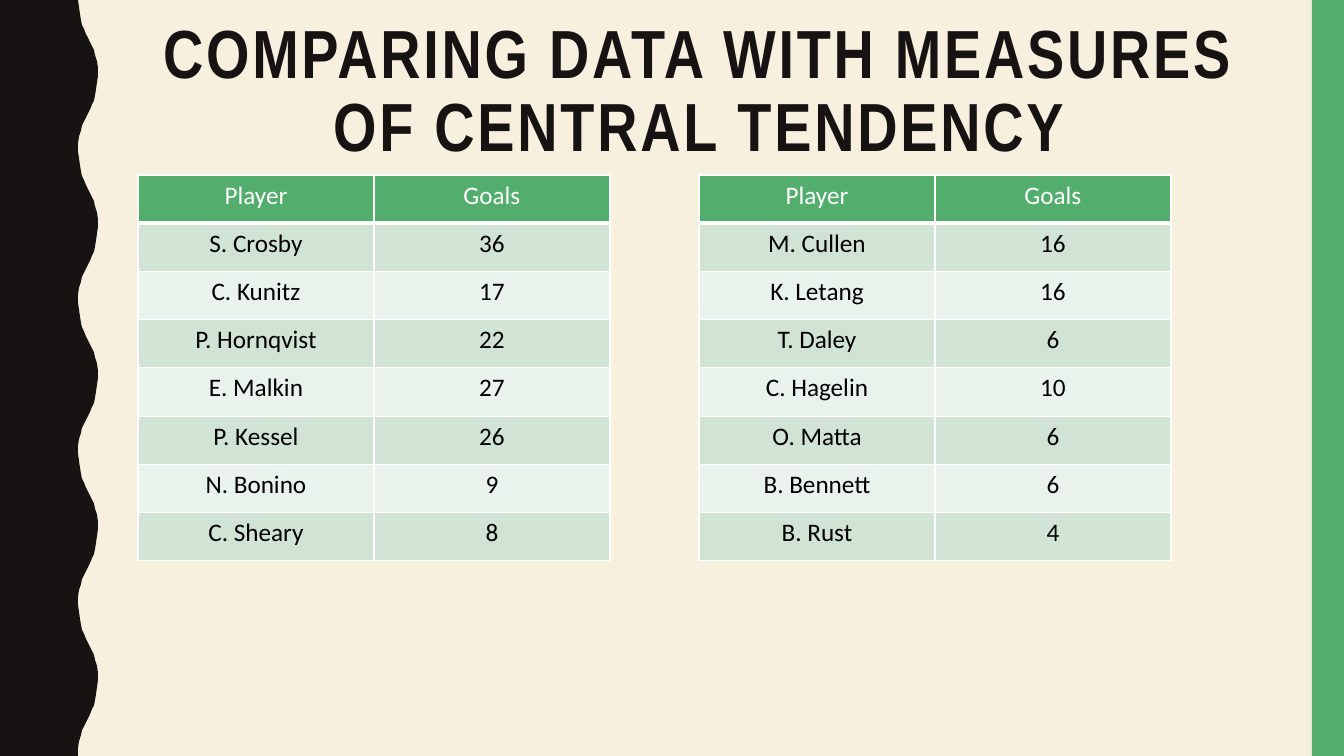
from lxml import etree
from pptx import Presentation
from pptx.dml.color import RGBColor
from pptx.enum.shapes import MSO_SHAPE
from pptx.enum.text import MSO_ANCHOR, PP_ALIGN
from pptx.oxml.ns import qn
from pptx.util import Emu, Pt

RECTANGLE = MSO_SHAPE.RECTANGLE
MIDDLE = MSO_ANCHOR.MIDDLE
CENTER = PP_ALIGN.CENTER

CREAM = RGBColor(0xF7, 0xF0, 0xDF)
INK = RGBColor(0x17, 0x13, 0x12)
GREEN = RGBColor(0x53, 0xAE, 0x6E)
PALE_GREEN = RGBColor(0xD1, 0xE3, 0xD5)
PALEST_GREEN = RGBColor(0xE9, 0xF2, 0xEB)
WHITE = RGBColor(0xFF, 0xFF, 0xFF)
BLACK = RGBColor(0x00, 0x00, 0x00)

WIDTH, HEIGHT = 1344, 756
EMU_PER_PX = 914400 / 100.8

# Half a wave of the left edge, from its inner to its outer side
HALF_WAVE = [(78, 0), (79, 7), (80, 14), (81, 20), (82, 25), (84, 29), (86, 34),
             (88, 38), (90, 42), (92, 46), (94, 50), (95, 55), (97, 61), (98, 68)]
HALF_WAVE_COUNT = 10
INNER, OUTER = 78, 98

TITLE = "COMPARING DATA WITH MEASURES OF CENTRAL TENDENCY"
TITLE_FORMAT = {"name": "Arial Narrow", "size": Pt(48.6), "bold": True}
CELL_FORMAT = {"name": "Calibri", "size": Pt(18), "bold": False}

HEADER = ("Player", "Goals")
LEFT_SCORERS = [("S. Crosby", 36), ("C. Kunitz", 17), ("P. Hornqvist", 22),
                ("E. Malkin", 27), ("P. Kessel", 26), ("N. Bonino", 9),
                ("C. Sheary", 8)]
RIGHT_SCORERS = [("M. Cullen", 16), ("K. Letang", 16), ("T. Daley", 6),
                 ("C. Hagelin", 10), ("O. Matta", 6), ("B. Bennett", 6),
                 ("B. Rust", 4)]


def px(length):
    return Emu(round(length * EMU_PER_PX))


def paint(shape, color):
    shape.shadow.inherit = False
    shape.fill.solid()
    shape.fill.fore_color.rgb = color
    shape.line.fill.background()


def write(paragraph, text, font_format, color):
    paragraph.alignment = CENTER
    run = paragraph.add_run()
    run.text = text
    for name, value in font_format.items():
        setattr(run.font, name, value)
    run.font.color.rgb = color
    return run


def add_wavy_band(slide, left, top, height):
    half_height = height / HALF_WAVE_COUNT
    points = []
    for half in range(HALF_WAVE_COUNT):
        for x, y in HALF_WAVE:
            edge = x if half % 2 == 0 else INNER + OUTER - x
            points.append((px(left + edge), px(top + half * half_height + y)))
    points += [(px(left + INNER), px(top + height)), (px(left), px(top + height))]
    builder = slide.shapes.build_freeform(px(left), px(top))
    builder.add_line_segments(points, close=True)
    paint(builder.convert_to_shape(), INK)


def add_side_bar(slide, left, top, width, height):
    bar = slide.shapes.add_shape(RECTANGLE, px(left), px(top), px(width), px(height))
    paint(bar, GREEN)


def add_title(slide, left, top, width, height):
    box = slide.shapes.add_textbox(px(left), px(top), px(width), px(height))
    frame = box.text_frame
    frame.word_wrap = True
    frame.vertical_anchor = MIDDLE
    paragraph = frame.paragraphs[0]
    paragraph.line_spacing = 0.9
    run = write(paragraph, TITLE, TITLE_FORMAT, INK)
    run._r.get_or_add_rPr().set("spc", "200")


def add_borders(cell, is_header):
    properties = cell._tc.get_or_add_tcPr()
    for side in ("lnL", "lnR", "lnT", "lnB"):
        points = 3 if is_header and side == "lnB" else 1
        line = etree.SubElement(properties, qn(f"a:{side}"), w=str(Pt(points)))
        fill = etree.SubElement(line, qn("a:solidFill"))
        etree.SubElement(fill, qn("a:srgbClr"), val=str(WHITE))


def add_goal_table(slide, scorers, left, top, width, height):
    rows = [HEADER, *scorers]
    table = slide.shapes.add_table(len(rows), len(HEADER), px(left), px(top),
                                   px(width), px(height)).table
    for column in table.columns:
        column.width = px(width / len(HEADER))
    for row_index, values in enumerate(rows):
        table.rows[row_index].height = px(height / len(rows))
        is_header = row_index == 0
        band = PALE_GREEN if row_index % 2 else PALEST_GREEN
        for column_index, value in enumerate(values):
            cell = table.cell(row_index, column_index)
            add_borders(cell, is_header)
            cell.fill.solid()
            cell.fill.fore_color.rgb = GREEN if is_header else band
            write(cell.text_frame.paragraphs[0], str(value), CELL_FORMAT,
                  WHITE if is_header else BLACK)


def main():
    presentation = Presentation()
    presentation.slide_width, presentation.slide_height = px(WIDTH), px(HEIGHT)
    slide = presentation.slides.add_slide(presentation.slide_layouts[6])
    slide.background.fill.solid()
    slide.background.fill.fore_color.rgb = CREAM

    # Side decoration
    add_wavy_band(slide, 0, 0, HEIGHT)
    add_side_bar(slide, 1312, 0, 32, HEIGHT)

    # Title and the two goal tables
    add_title(slide, 138, 11, 1122, 164)
    for left, scorers in ((138, LEFT_SCORERS), (699, RIGHT_SCORERS)):
        add_goal_table(slide, scorers, left, 175, 472, 386)

    presentation.save("out.pptx")


if __name__ == "__main__":
    main()
